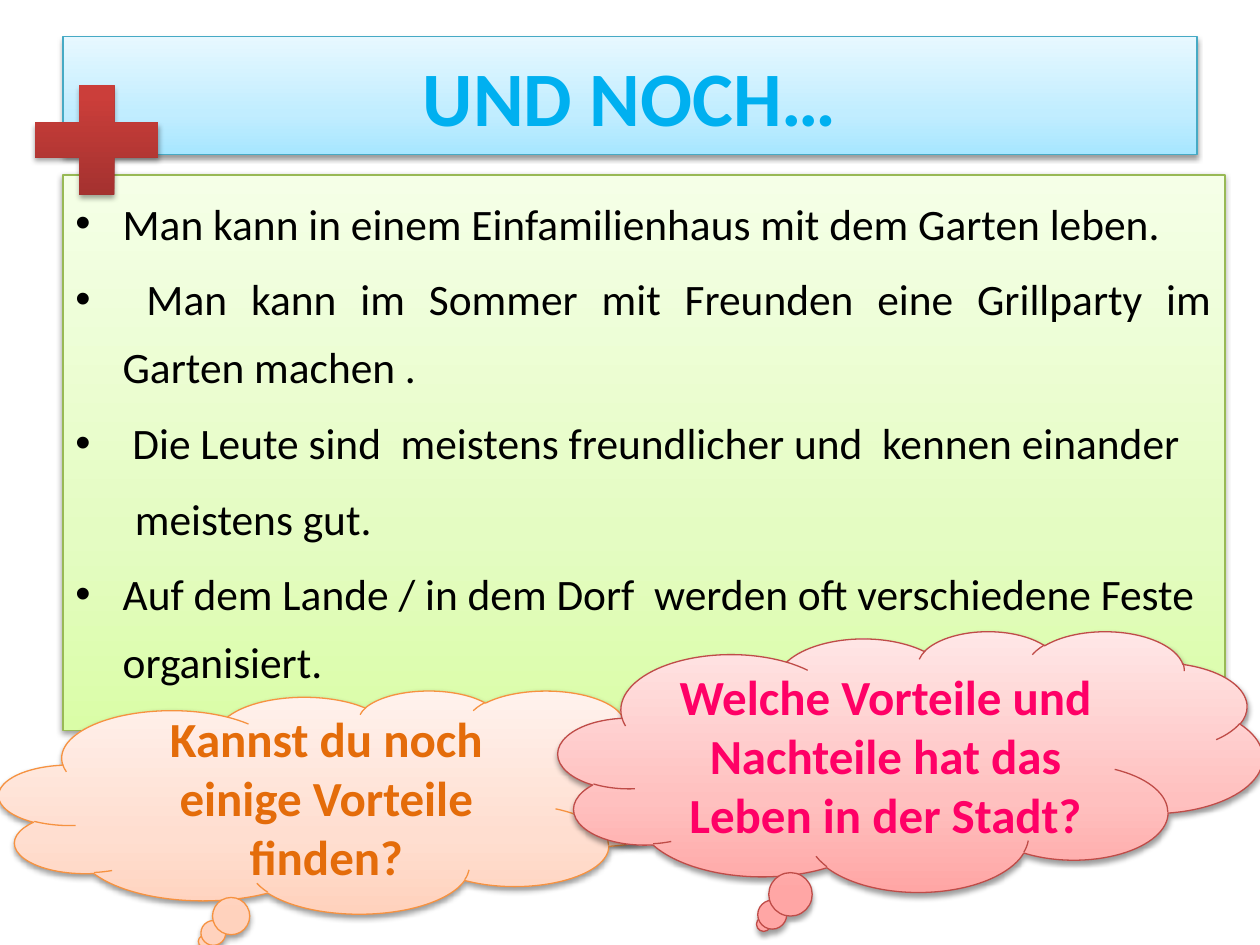
from copy import deepcopy

from pptx import Presentation
from pptx.dml.color import RGBColor
from pptx.enum.shapes import MSO_SHAPE as Shape
from pptx.enum.text import MSO_ANCHOR as Anchor, PP_ALIGN as Align
from pptx.oxml.ns import qn
from pptx.util import Pt
from lxml.etree import SubElement

FONT = "Calibri"
COLORS = {
    "title_text": "00B0F0", "title_line": "46AAC5",
    "body_text": "000000", "body_line": "98B955",
    "orange_text": "E46C0A", "orange_line": "F69240",
    "pink_text": "FF0066", "pink_line": "BF4C48",
    "shadow": "000000",
}
# Gradient stops from bottom to top: (position, colour)
GRADIENTS = {
    "title": ((0, "A7E6FF"), (0.35, "C1EDFF"), (1, "E7F8FF")),
    "body": ((0, "DAFDA7"), (0.35, "E4FCC2"), (1, "F5FFE7")),
    "orange": ((0, "FFD2BD"), (0.35, "FFDED0"), (1, "FFF2ED")),
    "pink": ((0, "FFA6A5"), (0.35, "FFC0BF"), (1, "FFE7E7")),
    "plus": ((0, "9C2F2D"), (0.8, "CB3E3A"), (1, "CE3B37")),
}
INDENT = 27
# Advantages: (text, alignment, bulleted)
ADVANTAGES = (
    ("Man kann in einem Einfamilienhaus mit dem Garten leben.", Align.JUSTIFY, True),
    (" Man kann im Sommer mit Freunden eine Grillparty im Garten machen .", Align.JUSTIFY, True),
    (" Die Leute sind  meistens freundlicher und  kennen einander", Align.JUSTIFY, True),
    ("meistens gut.", Align.JUSTIFY, False),
    ("Auf dem Lande / in dem Dorf  werden oft verschiedene Feste organisiert.", Align.LEFT, True),
)


def color(name):
    return RGBColor.from_string(COLORS[name])


def add_shadow(shape, distance, opacity):
    shape.shadow.inherit = False
    effects = shape._element.spPr.find(qn("a:effectLst"))
    shadow = SubElement(effects, qn("a:outerShdw"), blurRad=str(Pt(3.1)),
                        dist=str(Pt(distance)), dir="5400000", rotWithShape="0")
    shade = SubElement(shadow, qn("a:srgbClr"), val=COLORS["shadow"])
    SubElement(shade, qn("a:alpha"), val=str(opacity * 1000))


def add_panel(slide, kind, box, theme, outlined=True, distance=1.6, opacity=38):
    """Add a shape with a vertical three-stop gradient and a soft shadow."""
    shape = slide.shapes.add_shape(kind, *map(Pt, box))
    shape.fill.gradient()
    shape.fill.gradient_angle = 90
    stop_list = shape._element.spPr.find(qn("a:gradFill")).find(qn("a:gsLst"))
    stop_list.append(deepcopy(stop_list[0]))
    for stop, (position, value) in zip(shape.fill.gradient_stops, GRADIENTS[theme]):
        stop.color.rgb = RGBColor.from_string(value)
        stop.position = position
    if outlined:
        shape.line.color.rgb = color(theme + "_line")
        shape.line.width = Pt(0.75)
    else:
        shape.line.fill.background()
    add_shadow(shape, distance, opacity)
    return shape


def style_text(paragraph, text, theme, size, bold, align):
    paragraph.text = text
    paragraph.alignment = align
    font = paragraph.font
    font.name, font.size, font.bold = FONT, Pt(size), bold
    font.color.rgb = color(theme + "_text")


def add_label(slide, kind, box, theme, text, size):
    """Add a panel with one centred bold text."""
    frame = add_panel(slide, kind, box, theme).text_frame
    frame.word_wrap = True
    frame.vertical_anchor = Anchor.MIDDLE
    style_text(frame.paragraphs[0], text, theme, size, True, Align.CENTER)


def add_advantages(slide, box):
    frame = add_panel(slide, Shape.RECTANGLE, box, "body").text_frame
    frame.word_wrap = True
    frame.vertical_anchor = Anchor.TOP
    for index, (text, align, bulleted) in enumerate(ADVANTAGES):
        paragraph = frame.add_paragraph() if index else frame.paragraphs[0]
        style_text(paragraph, text, "body", 24.8, False, align)
        paragraph.line_spacing = 1.3
        paragraph.space_before = Pt(4.6)
        properties = paragraph._p.get_or_add_pPr()
        if bulleted:
            properties.set("marL", str(Pt(INDENT)))
            properties.set("indent", str(Pt(-INDENT)))
            bullet_font = SubElement(properties, qn("a:buFont"), typeface="Arial")
            bullet = SubElement(properties, qn("a:buChar"), char="•")
            # Bullets come before the default run properties
            defaults = properties.find(qn("a:defRPr"))
            defaults.addprevious(bullet_font)
            defaults.addprevious(bullet)
        else:
            properties.set("marL", str(Pt(INDENT + 7)))


def main():
    presentation = Presentation()
    presentation.slide_width, presentation.slide_height = Pt(720), Pt(540)
    slide = presentation.slides.add_slide(presentation.slide_layouts[6])

    # Title and list
    add_label(slide, Shape.RECTANGLE, (36, 21, 648, 67.5), "title", "UND NOCH…", 44)
    add_advantages(slide, (36, 100, 664, 317.5))

    # Questions in clouds
    add_label(slide, Shape.CLOUD_CALLOUT, (-0.5, 394.5, 402.5, 127.5), "orange",
              "Kannst du noch einige Vorteile finden?", 28)
    add_label(slide, Shape.CLOUD_CALLOUT, (319, 360.5, 402.5, 149), "pink",
              "Welche Vorteile und Nachteile hat das Leben in der Stadt?", 28)

    # Plus sign
    add_panel(slide, Shape.MATH_PLUS, (7, 37.5, 96.5, 85), "plus",
              outlined=False, distance=1.8, opacity=35)

    presentation.save("out.pptx")


if __name__ == "__main__":
    main()
